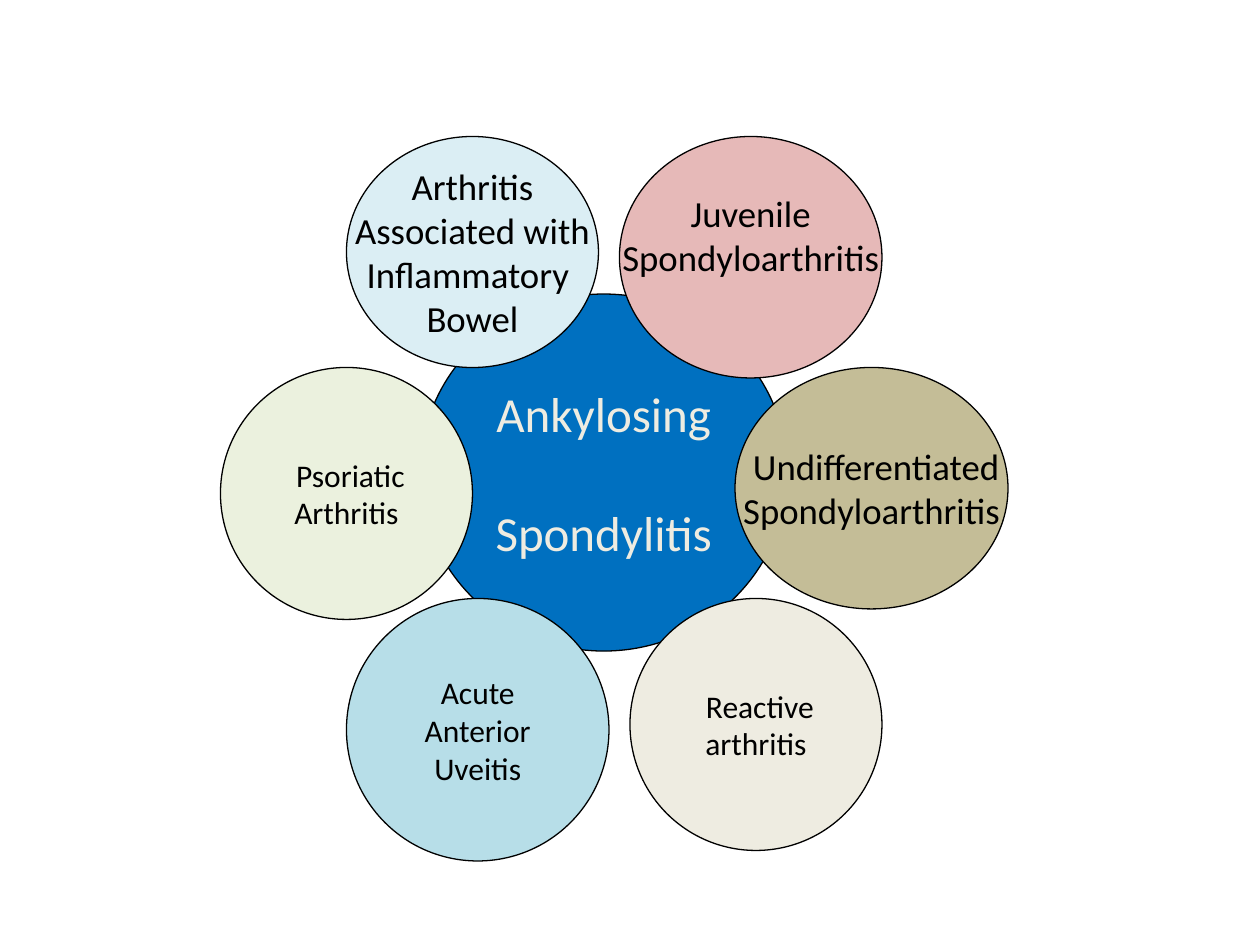
from dataclasses import dataclass

from pptx import Presentation
from pptx.dml.color import RGBColor
from pptx.enum.shapes import MSO_SHAPE
from pptx.enum.text import MSO_ANCHOR, PP_ALIGN
from pptx.util import Pt

OVAL = MSO_SHAPE.OVAL
MIDDLE = MSO_ANCHOR.MIDDLE
CENTER = PP_ALIGN.CENTER
BLANK = 6


@dataclass(frozen=True)
class Theme:
    font: str = "Calibri"
    ink: str = "000000"
    cream: str = "EEECE1"
    blue: str = "0070C0"
    aqua: str = "B7DEE8"
    ice: str = "DBEEF4"
    green: str = "EBF1DE"
    tan: str = "C4BD97"
    rose: str = "E6B9B8"
    hub: int = 28
    large: int = 21
    small: int = 18
    edge: float = 0.75


THEME = Theme()


def color(code):
    return RGBColor.from_string(code)


def add_disc(slide, box, fill, lines, size, ink=THEME.ink, gap=0, lift=0):
    """Draw a labelled disc; gap parts its lines, lift raises the text."""
    disc = slide.shapes.add_shape(OVAL, *map(Pt, box))
    disc.shadow.inherit = False
    disc.fill.solid()
    disc.fill.fore_color.rgb = color(fill)
    disc.line.color.rgb = color(THEME.ink)
    disc.line.width = Pt(THEME.edge)

    frame = disc.text_frame
    frame.word_wrap = False
    frame.vertical_anchor = MIDDLE
    frame.margin_bottom += Pt(lift)
    for i, line in enumerate(lines):
        para = frame.add_paragraph() if i else frame.paragraphs[0]
        para.alignment = CENTER
        para._p.get_or_add_pPr().set("rtl", "1")
        if i and gap:
            para.space_before = Pt(gap)
        run = para.add_run()
        run.text = line
        run.font.name = THEME.font
        run.font.size = Pt(size)
        run.font.color.rgb = color(ink)


def add_wheel(slide, box):
    """Place the hub and the ring of related diseases inside the box."""
    left, top = box[:2]

    def place(x, y, wide, high):
        return left + x, top + y, wide, high

    # Hub, behind the ring
    add_disc(slide, place(114, 90, 210, 204), THEME.blue,
             ["Ankylosing", "Spondylitis"], THEME.hub, THEME.cream, gap=34)

    # Ring of diseases, back to front
    ring = [
        ((72, 264, 150, 150), THEME.aqua,
         ["Acute", "Anterior", "Uveitis"], THEME.small),
        ((0, 132, 144, 144), THEME.green,
         ["Psoriatic ", "Arthritis"], THEME.small),
        ((234, 264, 144, 144), THEME.cream,
         ["Reactive ", "arthritis"], THEME.small),
        ((294, 132, 156, 138), THEME.tan,
         ["Undifferentiated ", "Spondyloarthritis"], THEME.large),
        ((72, 0, 144, 132), THEME.ice,
         ["Arthritis", "Associated with", " Inflammatory", "Bowel"],
         THEME.large),
    ]
    for spot, fill, lines, size in ring:
        add_disc(slide, place(*spot), fill, lines, size)

    # This label sits above the middle of its disc
    add_disc(slide, place(228, 0, 150, 138), THEME.rose,
             ["Juvenile", "Spondyloarthritis"], THEME.large, lift=25.6)


def main():
    deck = Presentation()
    deck.slide_width, deck.slide_height = Pt(720), Pt(540)
    slide = deck.slides.add_slide(deck.slide_layouts[BLANK])
    add_wheel(slide, (126, 78, 450, 414))
    deck.save("out.pptx")


if __name__ == "__main__":
    main()
